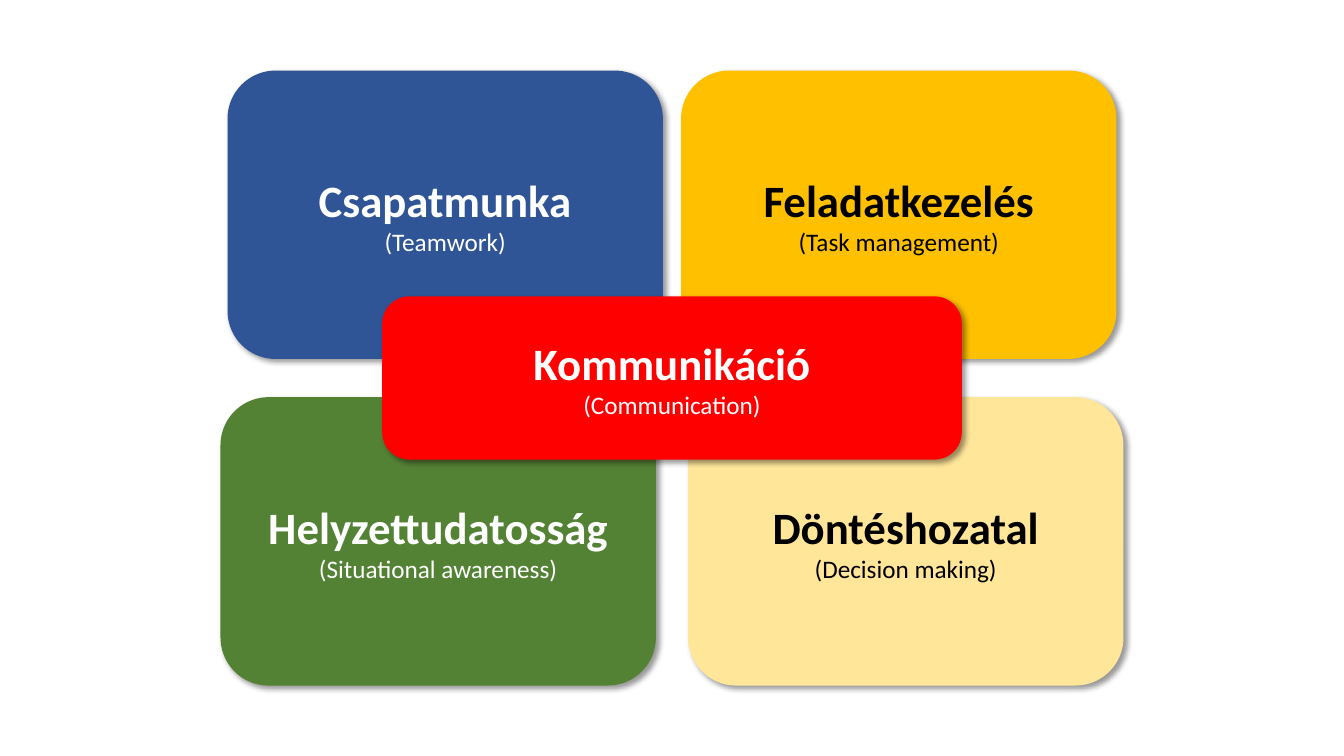
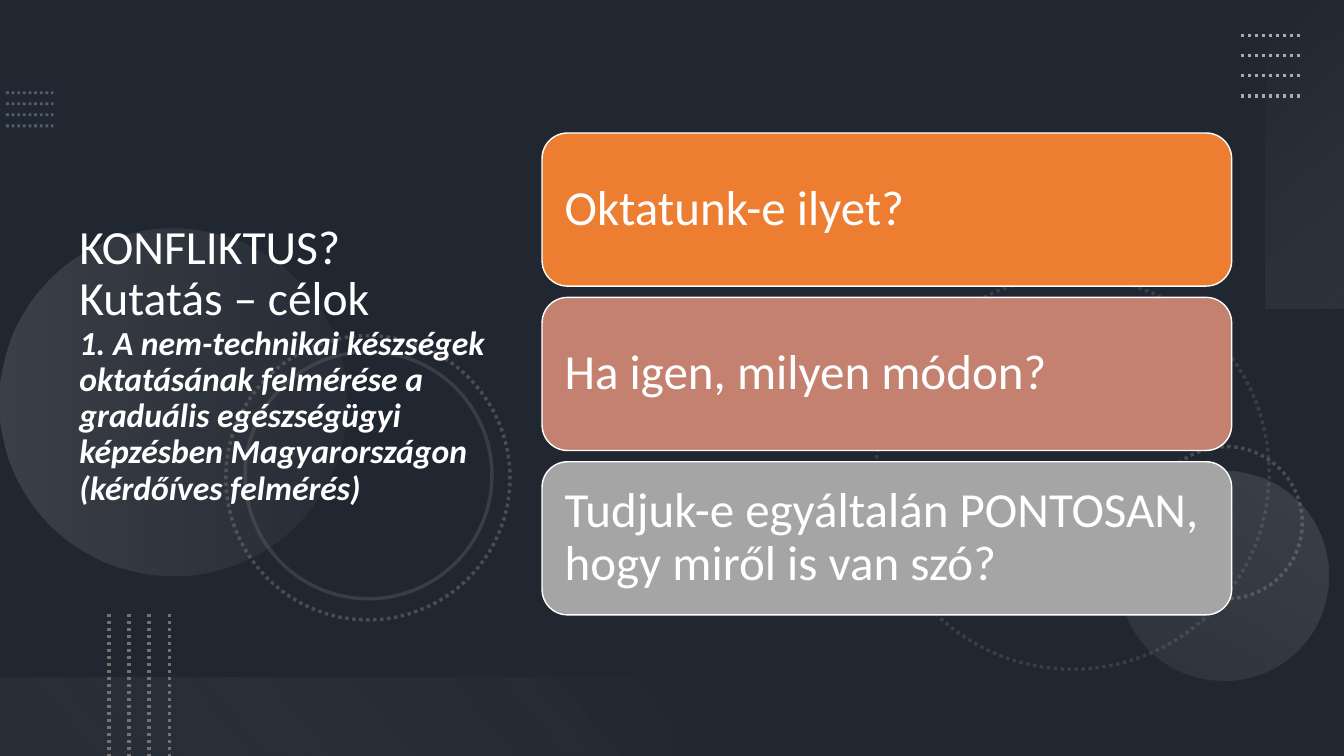
"""Build two slides on non-technical skills: a skills map and the research goals."""
import pptx
import pptx.dml.color
import pptx.enum.dml
import pptx.enum.shapes
import pptx.enum.text
import pptx.oxml.ns
import pptx.oxml.xmlchemy
import pptx.util
from lxml import etree

Pt = pptx.util.Pt
RGBColor = pptx.dml.color.RGBColor
Shape = pptx.enum.shapes.MSO_SHAPE
Align = pptx.enum.text.PP_ALIGN
qn = pptx.oxml.ns.qn

FONT = "Calibri"
WIDTH, HEIGHT = 960, 540
WHITE = RGBColor(0xFF, 0xFF, 0xFF)
BLACK = RGBColor(0x00, 0x00, 0x00)
BLUE = RGBColor(0x2F, 0x55, 0x97)
GOLD = RGBColor(0xFF, 0xC0, 0x00)
GREEN = RGBColor(0x54, 0x82, 0x35)
CREAM = RGBColor(0xFF, 0xE6, 0x99)
RED = RGBColor(0xFF, 0x00, 0x00)
SLATE = RGBColor(0x44, 0x54, 0x6A)
STEEL = RGBColor(0x84, 0x97, 0xB0)
DARK_GRAY = RGBColor(0x76, 0x71, 0x71)
LIGHT_GRAY = RGBColor(0xAF, 0xAB, 0xAB)
PALE_GRAY = RGBColor(0xF5, 0xF5, 0xF5)
ORANGE = RGBColor(0xED, 0x7D, 0x31)
CLAY = RGBColor(0xC4, 0x81, 0x70)
SILVER = RGBColor(0xA5, 0xA5, 0xA5)


def set_opacity(element, *percents):
    """Set the opacity of each colour inside an element, in order."""
    for colour, percent in zip(element.iter(qn("a:srgbClr")), percents):
        etree.SubElement(colour, qn("a:alpha")).set("val", str(percent * 1000))


def add_shadow(shape):
    """Give a shape a soft shadow to the lower right."""
    effects = shape.element.spPr.find(qn("a:effectLst"))
    shadow = etree.SubElement(effects, qn("a:outerShdw"), blurRad=str(Pt(4)),
                              dist=str(Pt(3)), dir="2700000", algn="tl", rotWithShape="0")
    colour = etree.SubElement(shadow, qn("a:srgbClr"), val=str(BLACK))
    etree.SubElement(colour, qn("a:alpha"), val="40000")


def add_shape(slide, kind, box, fill=None, rotation=0):
    """Add a plain preset shape without line or shadow."""
    shape = slide.shapes.add_shape(kind, *map(Pt, box))
    shape.rotation = rotation
    shape.shadow.inherit = False
    shape.line.fill.background()
    if fill is None:
        shape.fill.background()
    else:
        shape.fill.solid()
        shape.fill.fore_color.rgb = fill
    return shape


def add_gradient(slide, kind, box, rotation, angle, stops):
    """Add a shape whose fill fades between (position, colour, opacity) stops."""
    shape = add_shape(slide, kind, box, rotation=rotation)
    shape.fill.gradient()
    shape.fill.gradient_angle = 360 - angle
    for stop, (position, colour, _) in zip(shape.fill.gradient_stops, stops):
        stop.position = position
        stop.color.rgb = colour
    set_opacity(shape.element.spPr, *(opacity for _, _, opacity in stops))


def style_line(shape, colour, width, dotted=True, opacity=100):
    """Style the line of a shape or connector."""
    shape.line.color.rgb = colour
    shape.line.width = Pt(width)
    if dotted:
        shape.line.dash_style = pptx.enum.dml.MSO_LINE.ROUND_DOT
    if opacity < 100:
        set_opacity(shape.element.spPr.find(qn("a:ln")), opacity)


def add_ring(slide, left, top, size, opacity, dotted=True):
    """Add a faint unfilled circle."""
    ring = add_shape(slide, Shape.OVAL, (left, top, size, size), rotation=75)
    style_line(ring, DARK_GRAY, 2.5, dotted, opacity)


def add_dot_rows(slide, start, end, step, colour, width=2.5, opacity=100):
    """Add four parallel dotted lines, each moved by the same step."""
    for index in range(4):
        points = [place + index * move for point in (start, end)
                  for place, move in zip(point, step)]
        line = slide.shapes.add_connector(pptx.enum.shapes.MSO_CONNECTOR.STRAIGHT,
                                          *map(Pt, points))
        style_line(line, colour, width, opacity=opacity)
        etree.SubElement(line.element.spPr, qn("a:effectLst"))


def format_run(run, size, colour, bold=False, italic=False):
    """Apply the common font to a run."""
    run.font.name = FONT
    run.font.size = Pt(size)
    run.font.color.rgb = colour
    run.font.bold = bold
    run.font.italic = italic


def add_skill(slide, box, fill, colour, name, translation):
    """Add a shadowed skill box with a name and its English term."""
    shape = add_shape(slide, Shape.ROUNDED_RECTANGLE, box, fill)
    add_shadow(shape)
    frame = shape.text_frame
    frame.text = f"{name}\n({translation})"
    for paragraph, size in zip(frame.paragraphs, (32, 18)):
        paragraph.alignment = Align.CENTER
        format_run(paragraph.runs[0], size, colour, bold=size == 32)


def add_question(slide, box, fill, text):
    """Add a white-edged card with a left-aligned question."""
    card = add_shape(slide, Shape.ROUNDED_RECTANGLE, box, fill)
    style_line(card, WHITE, 1, dotted=False)
    frame = card.text_frame
    frame.margin_left = frame.margin_right = Pt(10.8)
    frame.text = text
    paragraph = frame.paragraphs[0]
    paragraph.alignment = Align.LEFT
    paragraph.line_spacing = 0.9
    format_run(paragraph.runs[0], 35, WHITE)


def add_goal_title(slide):
    """Add the heading with the research goal below it."""
    box = slide.shapes.add_textbox(Pt(49.7), Pt(38.9), Pt(330.5), Pt(444.2))
    frame = box.text_frame
    frame.word_wrap = True
    frame.vertical_anchor = pptx.enum.text.MSO_ANCHOR.MIDDLE
    paragraph = frame.paragraphs[0]
    paragraph.text = ("KONFLIKTUS?\vKutatás – célok\v1. A nem-technikai készségek oktatásának "
                      "felmérése a graduális egészségügyi képzésben Magyarországon "
                      "(kérdőíves felmérés)")
    paragraph.line_spacing = 0.9
    *heading, goal = paragraph.runs
    for run in heading:
        format_run(run, 34, WHITE)
    format_run(goal, 24, WHITE, bold=True, italic=True)


def add_backdrop(slide):
    """Add the dark background with circles, bands and dotted lines."""
    slide.background.fill.solid()
    slide.background.fill.fore_color.rgb = SLATE
    veil = add_shape(slide, Shape.RECTANGLE, (0, 0, WIDTH, HEIGHT), BLACK)
    set_opacity(veil.element.spPr, 53)
    add_dot_rows(slide, (4.3, 66.2), (38.2, 66.2), (0, 7.9), STEEL, 2, 50)
    add_ring(slide, 625.7, 197.3, 280.8, 30)
    add_ring(slide, 821.5, 319, 108.7, 50)
    add_gradient(slide, Shape.OVAL, (0, 163.4, 247.7, 247.7), 270, 90,
                 [(0, LIGHT_GRAY, 20), (1, DARK_GRAY, 10)])
    add_gradient(slide, Shape.OVAL, (799.2, 336.2, 149.8, 149.8), 210, 90,
                 [(0, LIGHT_GRAY, 10), (1, LIGHT_GRAY, 20)])
    add_ring(slide, 161.3, 239.8, 203, 50)
    add_ring(slide, 175, 251.3, 176.4, 30, dotted=False)
    add_gradient(slide, Shape.RECTANGLE, (822.2, 82.1, 220.3, 56.2), 270, 140,
                 [(0, PALE_GRAY, 0), (1, LIGHT_GRAY, 10)])
    add_dot_rows(slide, (886.3, 25.2), (929.5, 25.2), (0, 14.4), LIGHT_GRAY)
    add_gradient(slide, Shape.RECTANGLE, (0, 483.8, WIDTH / 2, 56.2), 180, 140,
                 [(0.1, DARK_GRAY, 10), (1, PALE_GRAY, 0)])
    add_dot_rows(slide, (77.8, 438.5), (77.8, HEIGHT), (14.4, 0), DARK_GRAY)


def build_skills(slide):
    """Place four skill boxes around the one for communication."""
    width, height = 311, 206
    rows = [
        (50.4, 13, [(BLUE, WHITE, "Csapatmunka", "Teamwork"),
                    (GOLD, BLACK, "Feladatkezelés", "Task management")]),
        (283.7, 23, [(GREEN, WHITE, "Helyzettudatosság", "Situational awareness"),
                     (CREAM, BLACK, "Döntéshozatal", "Decision making")]),
    ]
    for top, gap, skills in rows:
        for column, skill in enumerate(skills):
            left = (WIDTH - gap) / 2 - width + column * (width + gap)
            add_skill(slide, (left, top, width, height), *skill)
    add_skill(slide, (273, 211.7, 414, 116.6), RED, WHITE, "Kommunikáció", "Communication")


def build_goals(slide):
    """Place the research goal beside its three questions."""
    add_backdrop(slide)
    add_goal_title(slide)
    questions = [(ORANGE, "Oktatunk-e ilyet?"),
                 (CLAY, "Ha igen, milyen módon?"),
                 (SILVER, "Tudjuk-e egyáltalán PONTOSAN, hogy miről is van szó?")]
    for index, (fill, text) in enumerate(questions):
        add_question(slide, (387.2, 95 + index * 117.4, 492.6, 109.4), fill, text)


def main():
    """Build and save the presentation."""
    presentation = pptx.Presentation()
    presentation.slide_width = Pt(WIDTH)
    presentation.slide_height = Pt(HEIGHT)
    blank = presentation.slide_layouts[6]
    for build in (build_skills, build_goals):
        build(presentation.slides.add_slide(blank))
    presentation.save("out.pptx")


if __name__ == "__main__":
    main()
